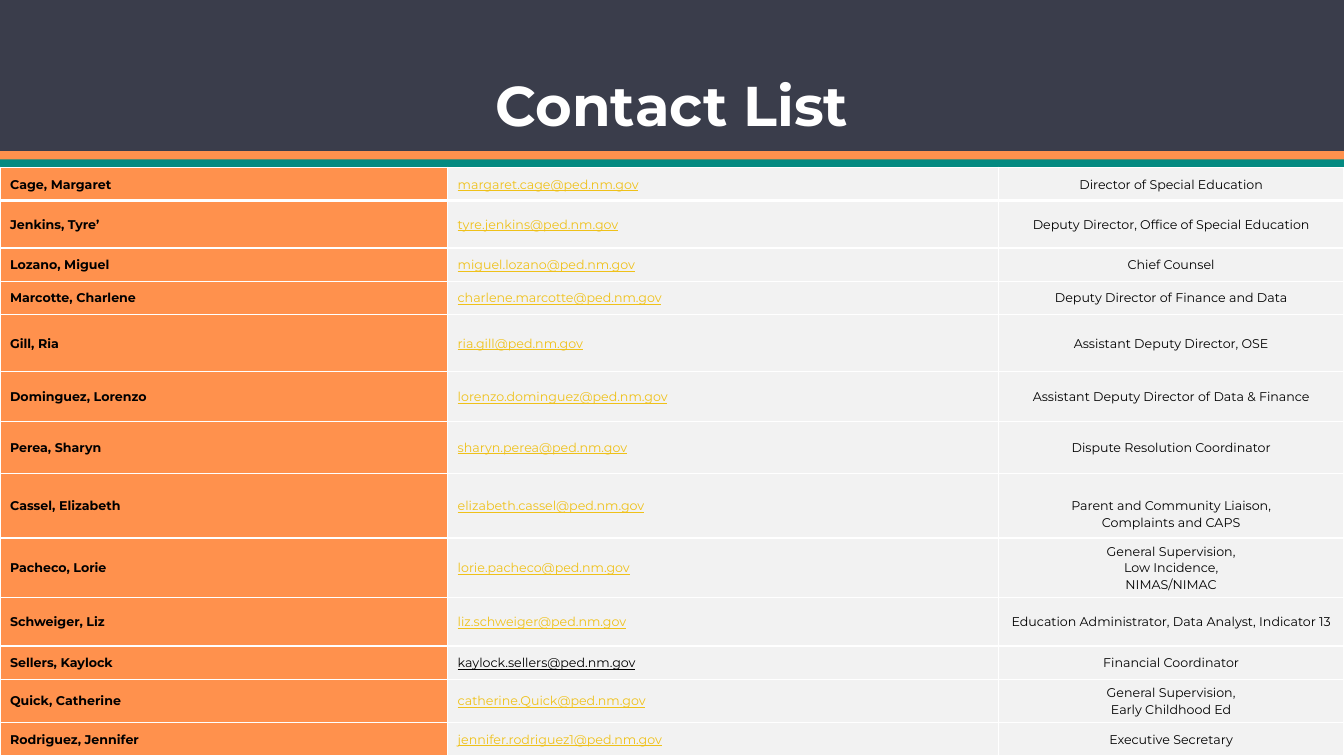
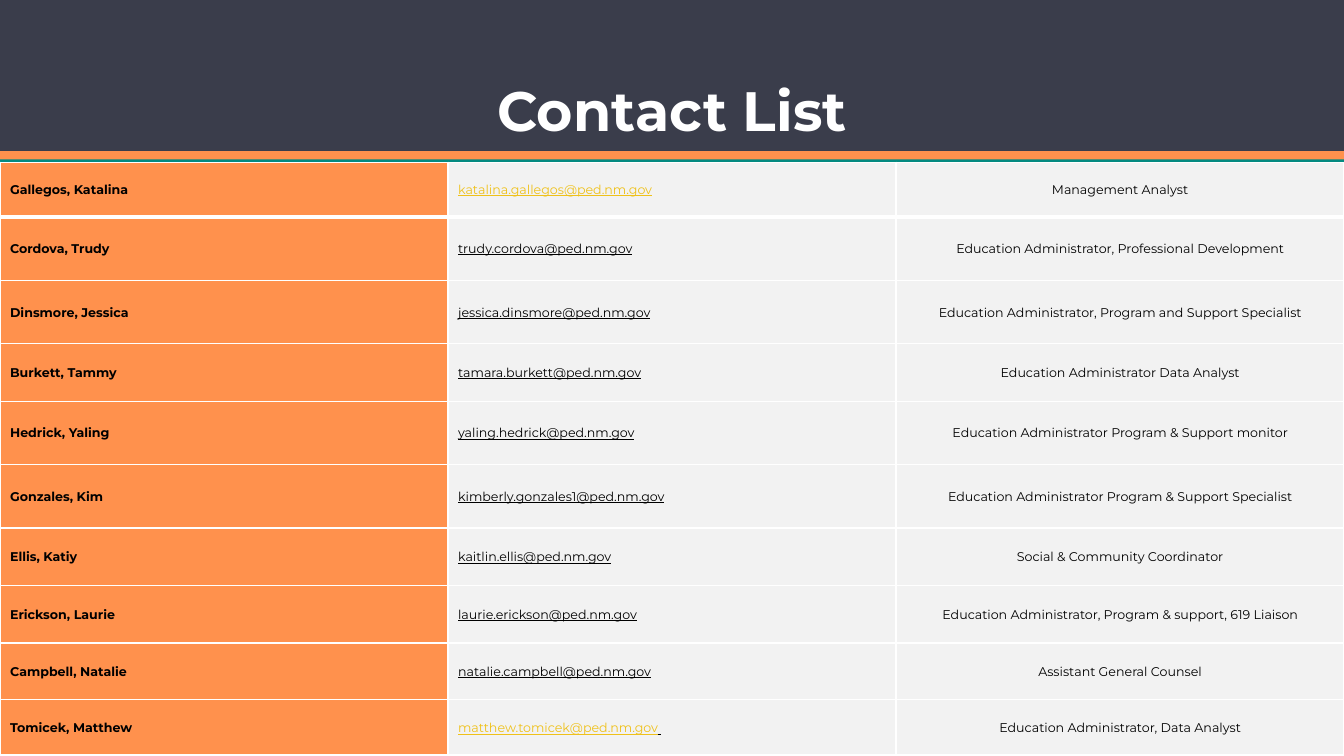
from lxml.etree import SubElement
from pptx import Presentation
from pptx.dml.color import RGBColor
from pptx.enum.shapes import MSO_SHAPE
from pptx.enum.text import MSO_ANCHOR, PP_ALIGN
from pptx.oxml.ns import qn
from pptx.util import Inches, Pt

WIDTH, HEIGHT = 13.33, 7.5
FONT = "Montserrat"
COLORS = {
    "navy": "3A3D4B", "orange": "FF914D", "teal": "048A81", "gray": "F2F2F2",
    "gold": "EFC119", "black": "000000", "white": "FFFFFF",
}
# Bands across the top: top, height, colour
BANDS = [(0, 1.5, "navy"), (1.5, 0.09, "orange"), (1.58, 0.09, "teal")]

# Contacts: name, mailbox, mailbox colour, role, row height
DOMAIN = "@ped.nm.gov"
LEADERS = [
    ("Cage, Margaret", "margaret.cage", "gold", "Director of Special Education", 0.33),
    ("Jenkins, Tyre’", "tyre.jenkins", "gold",
     "Deputy Director, Office of Special Education", 0.47),
    ("Lozano, Miguel", "miguel.lozano", "gold", "Chief Counsel", 0.33),
    ("Marcotte, Charlene", "charlene.marcotte", "gold",
     "Deputy Director of Finance and Data", 0.33),
    ("Gill, Ria", "ria.gill", "gold", "Assistant Deputy Director, OSE", 0.57),
    ("Dominguez, Lorenzo", "lorenzo.dominguez", "gold",
     "Assistant Deputy Director of Data & Finance", 0.49),
    ("Perea, Sharyn", "sharyn.perea", "gold", "Dispute Resolution Coordinator", 0.52),
    ("Cassel, Elizabeth", "elizabeth.cassel", "gold",
     "Parent and Community Liaison,\nComplaints and CAPS", 0.64),
    ("Pacheco, Lorie", "lorie.pacheco", "gold",
     "General Supervision,\nLow Incidence,\nNIMAS/NIMAC", 0.59),
    ("Schweiger, Liz", "liz.schweiger", "gold",
     "Education Administrator, Data Analyst, Indicator 13", 0.48),
    ("Sellers, Kaylock", "kaylock.sellers", "black", "Financial Coordinator", 0.33),
    ("Quick, Catherine", "catherine.Quick", "gold",
     "General Supervision,\nEarly Childhood Ed", 0.43),
    ("Rodriguez, Jennifer", "jennifer.rodriguez1", "gold", "Executive Secretary", 0.33),
]
STAFF = [
    ("Gallegos, Katalina", "katalina.gallegos", "gold", "Management Analyst", 0.54),
    ("Cordova, Trudy", "trudy.cordova", "black",
     "Education Administrator, Professional Development", 0.63),
    ("Dinsmore, Jessica", "jessica.dinsmore", "black",
     "Education Administrator, Program and Support Specialist", 0.63),
    ("Burkett, Tammy", "tamara.burkett", "black", "Education Administrator Data Analyst", 0.57),
    ("Hedrick, Yaling", "yaling.hedrick", "black",
     "Education Administrator Program & Support monitor", 0.63),
    ("Gonzales, Kim", "kimberly.gonzales1", "black",
     "Education Administrator Program & Support Specialist", 0.63),
    ("Ellis, Katiy", "kaitlin.ellis", "black", "Social & Community Coordinator", 0.57),
    ("Erickson, Laurie", "laurie.erickson", "black",
     "Education Administrator, Program & support, 619 Liaison", 0.57),
    ("Campbell, Natalie", "natalie.campbell", "black", "Assistant General Counsel", 0.56),
]
LAST_STAFF = [
    ("Tomicek, Matthew", "matthew.tomicek", "gold", "Education Administrator, Data Analyst", 0.56),
]
THIRDS = [WIDTH / 3] * 3
# Extra top margin of a role that sits below the middle of its row
ROLE_DROP = {"Cassel, Elizabeth": 0.16}

# Pages: title top, title size, tables (top, column widths, contacts)
PAGES = [
    (0.65, 40, [(1.66, [4.44, 5.46, 3.43], LEADERS)]),
    (0.7, 39.6, [(1.61, THIRDS, STAFF), (6.94, THIRDS, LAST_STAFF)]),
]


def rgb(color):
    return RGBColor.from_string(COLORS[color])


def add_span(para, text, size, color, bold=False, underline=False):
    span = para.add_run()
    span.text = text
    font = span.font
    font.name, font.size, font.bold, font.underline = FONT, Pt(size), bold, underline
    font.color.rgb = rgb(color)


def add_header(page, title_top, title_size):
    for top, height, color in BANDS:
        band = page.shapes.add_shape(
            MSO_SHAPE.RECTANGLE, 0, Inches(top), Inches(WIDTH), Inches(height))
        band.shadow.inherit = False
        band.fill.solid()
        band.fill.fore_color.rgb = rgb(color)
        band.line.fill.background()
    box = page.shapes.add_textbox(0, Inches(title_top), Inches(WIDTH), Inches(0.77))
    box.text_frame.word_wrap = True
    box.text_frame.vertical_anchor = MSO_ANCHOR.MIDDLE
    para = box.text_frame.paragraphs[0]
    para.alignment = PP_ALIGN.CENTER
    add_span(para, "Contact List", title_size, "white", bold=True)


def style_cell(cell, fill, top_width, bottom_width):
    properties = cell._tc.get_or_add_tcPr()
    for side, width in (("L", 1), ("R", 1), ("T", top_width), ("B", bottom_width)):
        border = SubElement(properties, qn(f"a:ln{side}"), w=str(Pt(width)))
        paint = SubElement(border, qn("a:solidFill"))
        SubElement(paint, qn("a:srgbClr"), val=COLORS["white"])
    cell.fill.solid()
    cell.fill.fore_color.rgb = rgb(fill)
    cell.vertical_anchor = MSO_ANCHOR.MIDDLE
    para = cell.text_frame.paragraphs[0]
    para.line_spacing = 1.07
    return para


def add_contacts(page, top, widths, contacts):
    total = sum(contact[-1] for contact in contacts)
    table = page.shapes.add_table(
        len(contacts), len(widths), 0, Inches(top), Inches(WIDTH), Inches(total)).table
    table.first_row = table.horz_banding = False
    for column, width in zip(table.columns, widths):
        column.width = Inches(width)
    for index, (name, mailbox, color, role, height) in enumerate(contacts):
        row = table.rows[index]
        row.height = Inches(height)
        # A thick rule sits under the first row
        rules = (3 if index == 1 else 1, 3 if index == 0 else 1)
        name_para, mail_para, role_para = (
            style_cell(cell, fill, *rules)
            for cell, fill in zip(row.cells, ("orange", "gray", "gray")))
        add_span(name_para, name, 9, "black", bold=True)
        add_span(mail_para, mailbox + DOMAIN, 9, color, underline=True)
        if contacts is LAST_STAFF:
            add_span(mail_para, " ", 9, "black", underline=True)
        role_para.alignment = PP_ALIGN.CENTER
        row.cells[2].margin_top = Inches(0.05 + ROLE_DROP.get(name, 0))
        for number, line in enumerate(role.split("\n")):
            if number:
                role_para.add_line_break()
            add_span(role_para, line, 9, "black")


def main():
    deck = Presentation()
    deck.slide_width, deck.slide_height = Inches(WIDTH), Inches(HEIGHT)
    for title_top, title_size, tables in PAGES:
        page = deck.slides.add_slide(deck.slide_layouts[6])
        add_header(page, title_top, title_size)
        for top, widths, contacts in tables:
            add_contacts(page, top, widths, contacts)
    deck.save("out.pptx")


if __name__ == "__main__":
    main()
